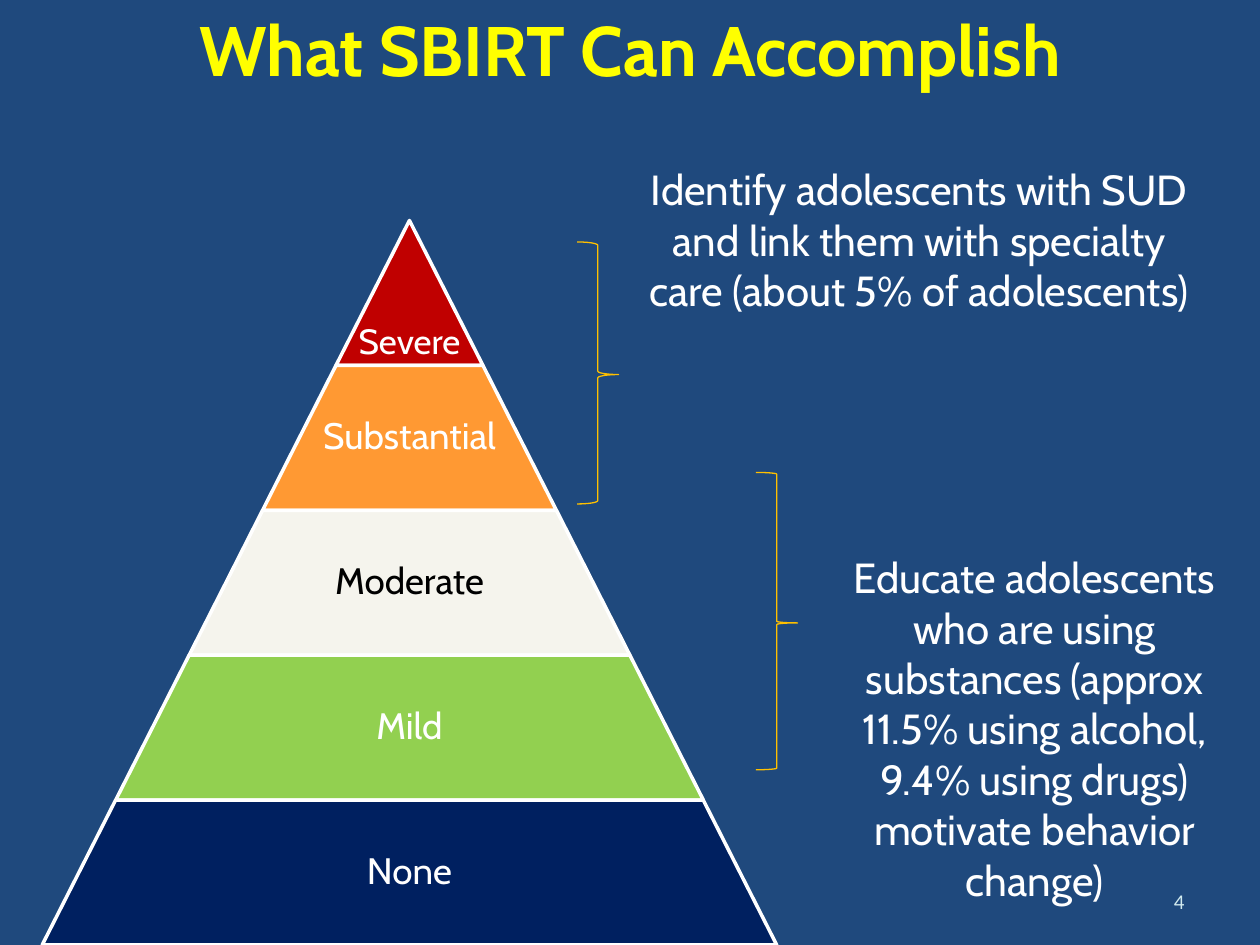
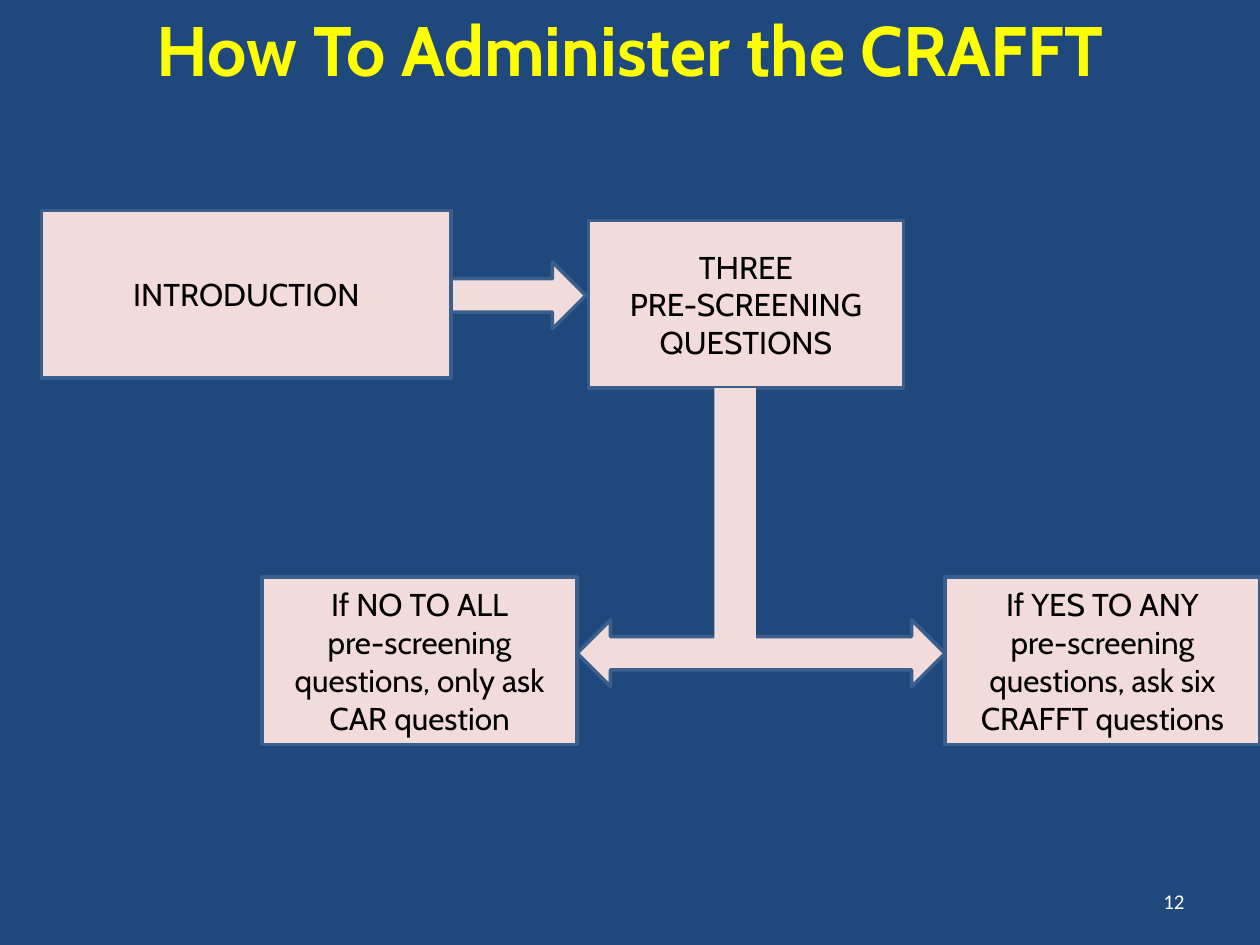
from pptx import Presentation
from pptx.dml.color import RGBColor
from pptx.enum.shapes import MSO_SHAPE
from pptx.enum.text import MSO_ANCHOR, PP_ALIGN
from pptx.util import Inches, Pt

COLORS = {
    "background": "1F497D", "title": "FFFF00", "white": "FFFFFF", "black": "000000",
    "number": "D1EAEE", "severe": "C00000", "substantial": "FF9933",
    "moderate": "F5F4ED", "mild": "92D050", "none": "002060",
    "brace": "FFC000", "box": "F2DCDB", "box_line": "3A5F8C",
}

# Pyramid levels from the top: label, fill, text colour, size, anchor
LEVELS = [
    ("Severe", "severe", "white", 20, MSO_ANCHOR.BOTTOM),
    ("Substantial", "substantial", "white", 21, MSO_ANCHOR.MIDDLE),
    ("Moderate", "moderate", "black", 21, MSO_ANCHOR.MIDDLE),
    ("Mild", "mild", "white", 21, MSO_ANCHOR.MIDDLE),
    ("None", "none", "white", 21, MSO_ANCHOR.MIDDLE),
]
PYRAMID_CENTER, PYRAMID_TOP = 3.25, 1.75
PYRAMID_WIDTH, LEVEL_HEIGHT = 5.83, 1.15

# Goals: brace position, brace curl, text, text position
GOALS = [
    ((4.58, 1.92, 0.33, 2.08), 0.08,
     "Identify adolescents with SUD and link them with specialty care "
     "(about 5% of adolescents)", (4.92, 1.25, 4.75, 2.12)),
    ((6, 3.75, 0.33, 2.36), 0.04,
     "Educate adolescents who are using substances (approx 11.5% using alcohol, "
     "9.4% using drugs) motivate behavior change)", (6.42, 4.33, 3.58, 3.33)),
]

# Flow steps, from back to front: preset, position, outlined, paragraphs
STEPS = [
    (MSO_SHAPE.RECTANGLE, (0.33, 1.67, 3.25, 1.33), True, ["INTRODUCTION"]),
    (MSO_SHAPE.RIGHT_ARROW, (3.58, 2.08, 1.07, 0.53), True, []),
    (MSO_SHAPE.RECTANGLE, (4.67, 1.75, 2.5, 1.33), True,
     ["THREE", "PRE-SCREENING QUESTIONS"]),
    (MSO_SHAPE.LEFT_RIGHT_ARROW, (4.58, 4.92, 2.92, 0.53), True, []),
    (MSO_SHAPE.RECTANGLE, (5.67, 3.08, 0.33, 2), False, []),
    (MSO_SHAPE.RECTANGLE, (2.08, 4.58, 2.5, 1.33), True,
     ["If NO TO ALL", "pre-screening questions, only ask CAR question"]),
    (MSO_SHAPE.RECTANGLE, (7.5, 4.58, 2.5, 1.33), True,
     ["If YES TO ANY", "pre-screening questions, ask six CRAFFT questions"]),
]


def rgb(name):
    return RGBColor.from_string(COLORS[name])


def write(sp, *paragraphs, size=24, color="white", font="Cabin", bold=False,
          align=PP_ALIGN.CENTER, anchor=MSO_ANCHOR.TOP, spacing=None, inset=None):
    tf = sp.text_frame
    tf.word_wrap = True
    tf.vertical_anchor = anchor
    if inset is not None:
        tf.margin_left = tf.margin_right = Inches(inset)
        tf.margin_top = tf.margin_bottom = Inches(inset)
    for i, text in enumerate(paragraphs):
        p = tf.add_paragraph() if i else tf.paragraphs[0]
        p.alignment = align
        if spacing:
            p.line_spacing = spacing
        r = p.add_run()
        r.text = text
        r.font.name, r.font.size, r.font.bold = font, Pt(size), bold
        r.font.color.rgb = rgb(color)


def add_text(s, at, *paragraphs, **fmt):
    write(s.shapes.add_textbox(*map(Inches, at)), *paragraphs, **fmt)


def add_shape(s, preset, at, fill=None, line=None, width=2, adjust=()):
    sp = s.shapes.add_shape(preset, *map(Inches, at))
    sp.shadow.inherit = False
    for i, value in enumerate(adjust):
        sp.adjustments[i] = value
    if fill:
        sp.fill.solid()
        sp.fill.fore_color.rgb = rgb(fill)
    else:
        sp.fill.background()
    if line:
        sp.line.color.rgb = rgb(line)
        sp.line.width = Pt(width)
    else:
        sp.line.fill.background()
    return sp


def add_slide(prs, title, number, number_color):
    s = prs.slides.add_slide(prs.slide_layouts[6])
    s.background.fill.solid()
    s.background.fill.fore_color.rgb = rgb("background")
    add_text(s, (0, 0, 10, 0.77), title, size=40, color="title", bold=True)
    add_text(s, (7.17, 6.95, 2.33, 0.4), number, size=12, color=number_color,
             font="Calibri", align=PP_ALIGN.RIGHT, anchor=MSO_ANCHOR.MIDDLE)
    return s


def add_pyramid(s):
    step = PYRAMID_WIDTH / len(LEVELS)
    slope = step / 2 / LEVEL_HEIGHT
    for i, (label, fill, color, size, anchor) in enumerate(LEVELS):
        width = step * (i + 1)
        at = (PYRAMID_CENTER - width / 2, PYRAMID_TOP + i * LEVEL_HEIGHT,
              width, LEVEL_HEIGHT)
        add_shape(s, MSO_SHAPE.TRAPEZOID, at, fill, "white", adjust=[slope])
        add_text(s, at, label, size=size, color=color, anchor=anchor,
                 spacing=0.9, inset=0.03)


def main():
    prs = Presentation()
    prs.slide_width, prs.slide_height = Inches(10), Inches(7.5)

    s = add_slide(prs, "What SBIRT Can Accomplish", "4", "number")
    add_pyramid(s)
    for brace_at, curl, text, text_at in GOALS:
        add_shape(s, MSO_SHAPE.RIGHT_BRACE, brace_at, line="brace", width=0.75,
                  adjust=[curl, 0.506])
        add_text(s, text_at, text)

    s = add_slide(prs, "How To Administer the CRAFFT", "12", "white")
    for preset, at, outlined, paragraphs in STEPS:
        sp = add_shape(s, preset, at, "box", "box_line" if outlined else None)
        if paragraphs:
            write(sp, *paragraphs, size=18, color="black", anchor=MSO_ANCHOR.MIDDLE)

    prs.save("out.pptx")


if __name__ == "__main__":
    main()
